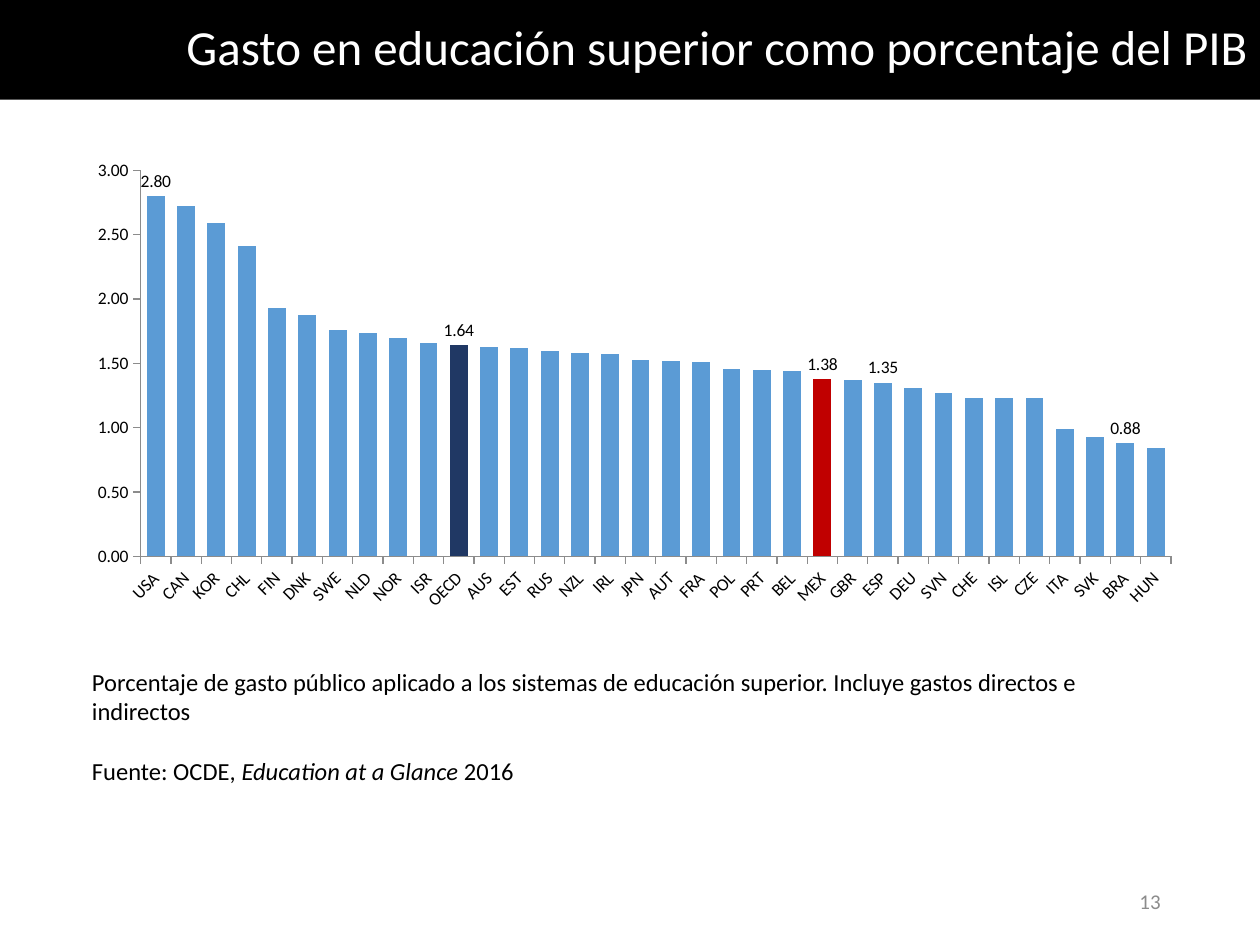
from lxml.etree import SubElement
from pptx import Presentation
from pptx.chart.data import CategoryChartData
from pptx.dml.color import RGBColor
from pptx.enum.chart import XL_CHART_TYPE, XL_LABEL_POSITION, XL_TICK_MARK
from pptx.enum.text import MSO_ANCHOR, PP_ALIGN
from pptx.oxml.ns import qn
from pptx.util import Inches, Pt

# Content
TITLE = "Gasto en educación superior como porcentaje del PIB"
PAGE_NUMBER = "13"
NOTES = [
    [("Porcentaje de gasto público aplicado a los sistemas de educación superior. "
      "Incluye gastos directos e indirectos", False)],
    [("Fuente: OCDE, ", False), ("Education at a Glance ", True), ("2016", False)],
]
SPENDING = [
    ("USA", 2.80), ("CAN", 2.72), ("KOR", 2.59), ("CHL", 2.41), ("FIN", 1.93),
    ("DNK", 1.88), ("SWE", 1.76), ("NLD", 1.74), ("NOR", 1.70), ("ISR", 1.66),
    ("OECD", 1.64), ("AUS", 1.63), ("EST", 1.62), ("RUS", 1.60), ("NZL", 1.58),
    ("IRL", 1.57), ("JPN", 1.53), ("AUT", 1.52), ("FRA", 1.51), ("POL", 1.46),
    ("PRT", 1.45), ("BEL", 1.44), ("MEX", 1.38), ("GBR", 1.37), ("ESP", 1.35),
    ("DEU", 1.31), ("SVN", 1.27), ("CHE", 1.23), ("ISL", 1.23), ("CZE", 1.23),
    ("ITA", 0.99), ("SVK", 0.93), ("BRA", 0.88), ("HUN", 0.84),
]
LABELLED = ["USA", "OECD", "MEX", "ESP", "BRA"]
HIGHLIGHTS = {"OECD": "203864", "MEX": "C00000"}
BAR_COLOR, AXIS_COLOR = "5B9BD5", "8C8C8C"
NUMBER_FORMAT = "0.00"


def color(value):
    return RGBColor.from_string(value)


def style_font(font, size, value, italic=False):
    font.name = "Calibri"
    font.size = Pt(size)
    font.color.rgb = color(value)
    font.italic = italic


def add_run(paragraph, text, size, value, italic=False):
    run = paragraph.add_run()
    run.text = text
    style_font(run.font, size, value, italic)


def fill_solid(fill, value):
    fill.solid()
    fill.fore_color.rgb = color(value)


def add_title(slide):
    title = slide.shapes.title
    title.left, title.top, title.width, title.height = (
        Inches(0), Inches(0), Inches(10), Inches(0.79))
    fill_solid(title.fill, "000000")
    title.text_frame.vertical_anchor = MSO_ANCHOR.MIDDLE
    paragraph = title.text_frame.paragraphs[0]
    paragraph.alignment = PP_ALIGN.RIGHT
    paragraph.line_spacing = 0.9
    add_run(paragraph, TITLE, 28, "FFFFFF")


def add_spending_chart(slide):
    data = CategoryChartData(number_format=NUMBER_FORMAT)
    countries = [country for country, _ in SPENDING]
    data.categories = countries
    data.add_series("Gasto", [value for _, value in SPENDING])
    chart = slide.shapes.add_chart(
        XL_CHART_TYPE.COLUMN_CLUSTERED,
        Inches(0.6), Inches(1.2), Inches(8.87), Inches(3.72), data).chart
    chart.has_legend = False
    chart.has_title = False
    style_font(chart.font, 10, "000000")

    # Axes
    for axis in (chart.category_axis, chart.value_axis):
        axis.has_major_gridlines = False
        axis.major_tick_mark = XL_TICK_MARK.OUTSIDE
        axis.minor_tick_mark = XL_TICK_MARK.NONE
        axis.format.line.color.rgb = color(AXIS_COLOR)
        axis.format.line.width = Pt(0.75)
        style_font(axis.tick_labels.font, 10, "000000")
    chart.category_axis.element_rotation = None
    value_axis = chart.value_axis
    value_axis.minimum_scale, value_axis.maximum_scale = 0, 3
    value_axis.major_unit = 0.5
    value_axis.tick_labels.number_format = NUMBER_FORMAT
    value_axis.tick_labels.number_format_is_linked = False
    category_text = chart.element.find(".//" + qn("c:catAx") + "/" + qn("c:txPr"))
    category_text.find(qn("a:bodyPr")).set("rot", "-2700000")

    # Bars, highlighted countries and selected labels
    plot = chart.plots[0]
    plot.gap_width, plot.overlap = 70, 6
    plot.vary_by_categories = False
    series = plot.series[0]
    series.invert_if_negative = False
    fill_solid(series.format.fill, BAR_COLOR)
    for country, value in HIGHLIGHTS.items():
        fill_solid(series.points[countries.index(country)].format.fill, value)
    series.data_labels.show_value = False
    for country in LABELLED:
        label = series.points[countries.index(country)].data_label
        style_font(label.font, 10, "000000")
        label.position = XL_LABEL_POSITION.OUTSIDE_END
    for label in chart.element.iter(qn("c:dLbl")):
        number_format = SubElement(label, qn("c:numFmt"),
                                   formatCode=NUMBER_FORMAT, sourceLinked="0")
        label.insert(1, number_format)


def add_notes_table(slide):
    table = slide.shapes.add_table(
        1, 1, Inches(0.73), Inches(5.3), Inches(8.11), Inches(0.93)).table
    table.first_row = table.horz_banding = False
    cell = table.cell(0, 0)
    cell.fill.background()
    cell.margin_left = cell.margin_right = cell.margin_top = cell.margin_bottom = 0
    frame = cell.text_frame
    for index, runs in enumerate(NOTES):
        paragraph = frame.add_paragraph() if index else frame.paragraphs[0]
        paragraph.space_before = Pt(17 if index else 0)
        for text, italic in runs:
            add_run(paragraph, text, 14, "000000", italic)


def add_page_number(slide):
    frame = slide.shapes.add_textbox(
        Inches(7.06), Inches(6.95), Inches(2.25), Inches(0.4)).text_frame
    frame.word_wrap = True
    frame.vertical_anchor = MSO_ANCHOR.MIDDLE
    frame.paragraphs[0].alignment = PP_ALIGN.RIGHT
    add_run(frame.paragraphs[0], PAGE_NUMBER, 12, AXIS_COLOR)


def main():
    presentation = Presentation()
    presentation.slide_width, presentation.slide_height = Inches(10), Inches(7.5)
    slide = presentation.slides.add_slide(presentation.slide_layouts[5])
    add_title(slide)
    add_page_number(slide)
    add_notes_table(slide)
    add_spending_chart(slide)
    presentation.save("out.pptx")


if __name__ == "__main__":
    main()
